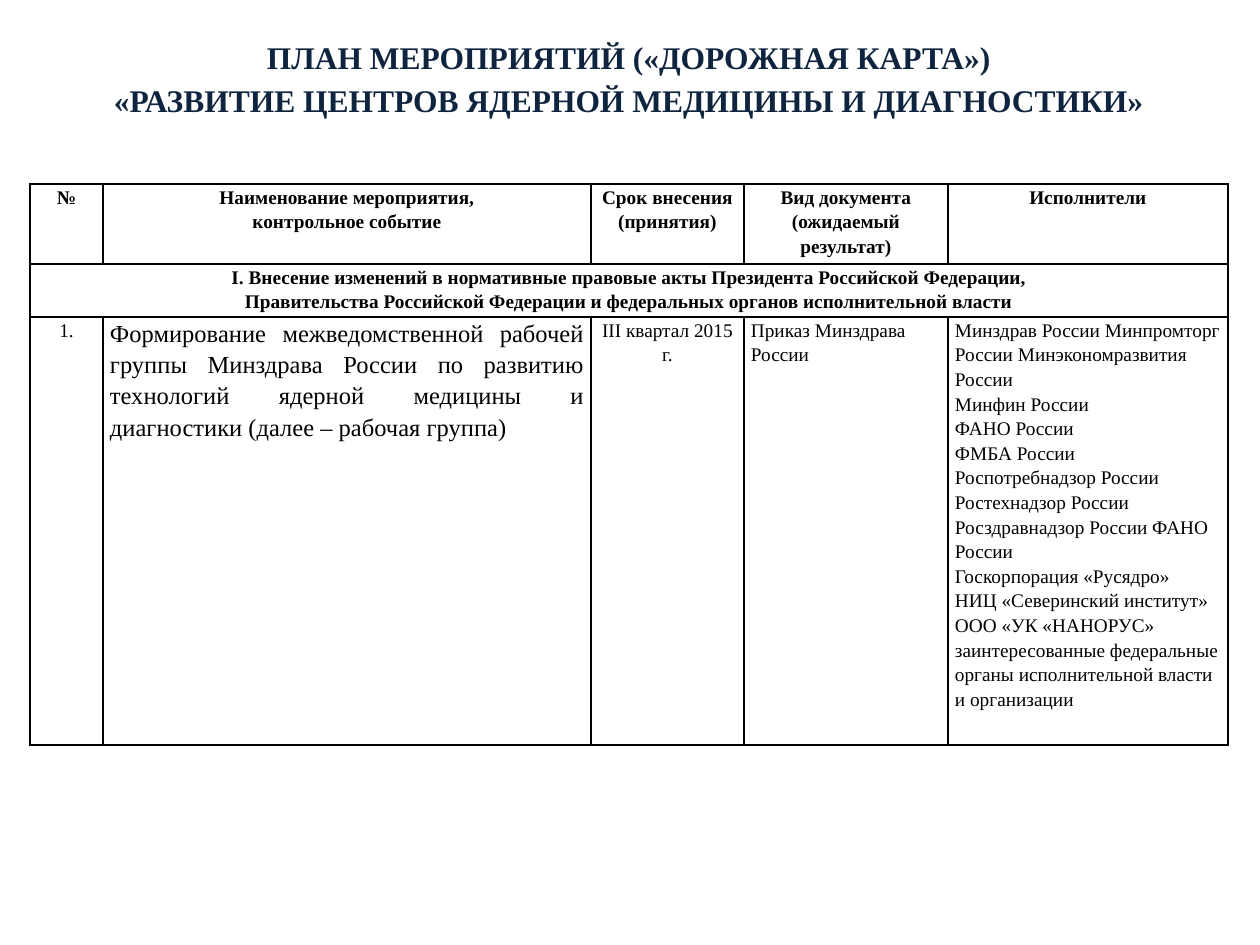
from dataclasses import dataclass

from lxml import etree
from pptx import Presentation
from pptx.dml.color import RGBColor
from pptx.enum.text import MSO_ANCHOR, MSO_AUTO_SIZE, PP_ALIGN
from pptx.oxml.ns import qn
from pptx.util import Emu, Pt

PX_PER_INCH = 126
FONT = "Times New Roman"
NAVY, BLACK, WHITE = "0F243E", "000000", "FFFFFF"
LEFT, CENTER, JUSTIFY = PP_ALIGN.LEFT, PP_ALIGN.CENTER, PP_ALIGN.JUSTIFY
TOP = MSO_ANCHOR.TOP
FIXED = MSO_AUTO_SIZE.NONE

SIDE, WIDTH = 30, 1198
TITLE_TOP, TITLE_HEIGHT = 26, 101
TABLE_TOP = 184
COLUMN_WIDTHS = [73, 488, 153, 204, 280]
ROW_HEIGHTS = [80, 53, 428]
CELL_INSET = 7


@dataclass
class CellText:
    text: str
    align: PP_ALIGN = CENTER
    size: int = 11
    bold: bool = False


TITLE = CellText(
    "ПЛАН МЕРОПРИЯТИЙ («ДОРОЖНАЯ КАРТА»)\n"
    "«РАЗВИТИЕ ЦЕНТРОВ ЯДЕРНОЙ МЕДИЦИНЫ И ДИАГНОСТИКИ»",
    size=18, bold=True,
)
HEADINGS = [
    "№",
    "Наименование мероприятия,\nконтрольное событие",
    "Срок внесения (принятия)",
    "Вид документа\n(ожидаемый результат)",
    "Исполнители",
]
SECTION = (
    "I. Внесение изменений в нормативные правовые акты Президента Российской Федерации,\n"
    "Правительства Российской Федерации и федеральных органов исполнительной власти"
)
EXECUTORS = "\n".join([
    "Минздрав России Минпромторг России Минэкономразвития России",
    "Минфин России",
    "ФАНО России",
    "ФМБА России Роспотребнадзор России Ростехнадзор России "
    "Росздравнадзор России ФАНО России",
    "Госкорпорация «Русядро»",
    "НИЦ «Северинский институт»",
    "ООО «УК «НАНОРУС»",
    "заинтересованные федеральные органы исполнительной власти и организации",
])
ROWS = [
    [CellText(heading, bold=True) for heading in HEADINGS],
    [CellText(SECTION, bold=True)],
    [
        CellText("1."),
        CellText(
            "Формирование межведомственной рабочей группы Минздрава России по развитию "
            "технологий ядерной медицины и диагностики (далее – рабочая группа)",
            JUSTIFY, 14,
        ),
        CellText("III квартал 2015 г."),
        CellText("Приказ Минздрава России", LEFT),
        CellText(EXECUTORS, LEFT),
    ],
]


def px(length: int) -> Emu:
    return Emu(round(length * 914400 / PX_PER_INCH))


def rgb(color: str) -> RGBColor:
    return RGBColor.from_string(color)


def write(frame, content: CellText, color: str) -> None:
    frame.text = content.text
    for paragraph in frame.paragraphs:
        paragraph.alignment = content.align
        paragraph.line_spacing = 1.15
        paragraph.space_before = paragraph.space_after = Pt(0)
        for run in paragraph.runs:
            run.font.name = FONT
            run.font.size = Pt(content.size)
            run.font.bold = content.bold
            run.font.color.rgb = rgb(color)


def style_cell(cell) -> None:
    cell.margin_left = cell.margin_right = px(CELL_INSET)
    cell.margin_top = cell.margin_bottom = 0
    cell.vertical_anchor = TOP
    cell.fill.solid()
    cell.fill.fore_color.rgb = rgb(WHITE)
    # Borders come before the fill in the cell properties
    properties = cell._tc.get_or_add_tcPr()
    for index, edge in enumerate(("a:lnL", "a:lnR", "a:lnT", "a:lnB")):
        border = etree.Element(qn(edge), w=str(Pt(1)))
        line_fill = etree.SubElement(border, qn("a:solidFill"))
        etree.SubElement(line_fill, qn("a:srgbClr"), val=BLACK)
        properties.insert(index, border)


def add_title(slide) -> None:
    title = slide.shapes.title
    title.left, title.top = px(SIDE), px(TITLE_TOP)
    title.width, title.height = px(WIDTH), px(TITLE_HEIGHT)
    frame = title.text_frame
    frame.word_wrap = True
    frame.auto_size = FIXED
    frame.vertical_anchor = TOP
    write(frame, TITLE, NAVY)


def add_plan(slide) -> None:
    plan = slide.shapes.add_table(
        len(ROW_HEIGHTS), len(COLUMN_WIDTHS),
        px(SIDE), px(TABLE_TOP), px(WIDTH), px(sum(ROW_HEIGHTS)),
    ).table
    plan.first_row = plan.horz_banding = False
    for column, width in zip(plan.columns, COLUMN_WIDTHS):
        column.width = px(width)
    for row, height in zip(plan.rows, ROW_HEIGHTS):
        row.height = px(height)
    for cell in plan.iter_cells():
        style_cell(cell)

    # The section heading spans the whole table
    plan.cell(1, 0).merge(plan.cell(1, len(COLUMN_WIDTHS) - 1))
    for row_index, contents in enumerate(ROWS):
        for column_index, content in enumerate(contents):
            write(plan.cell(row_index, column_index).text_frame, content, BLACK)


def main() -> None:
    deck = Presentation()
    deck.slide_width, deck.slide_height = px(1260), px(945)
    slide = deck.slides.add_slide(deck.slide_layouts[5])
    add_title(slide)
    add_plan(slide)
    deck.save("out.pptx")


if __name__ == "__main__":
    main()
